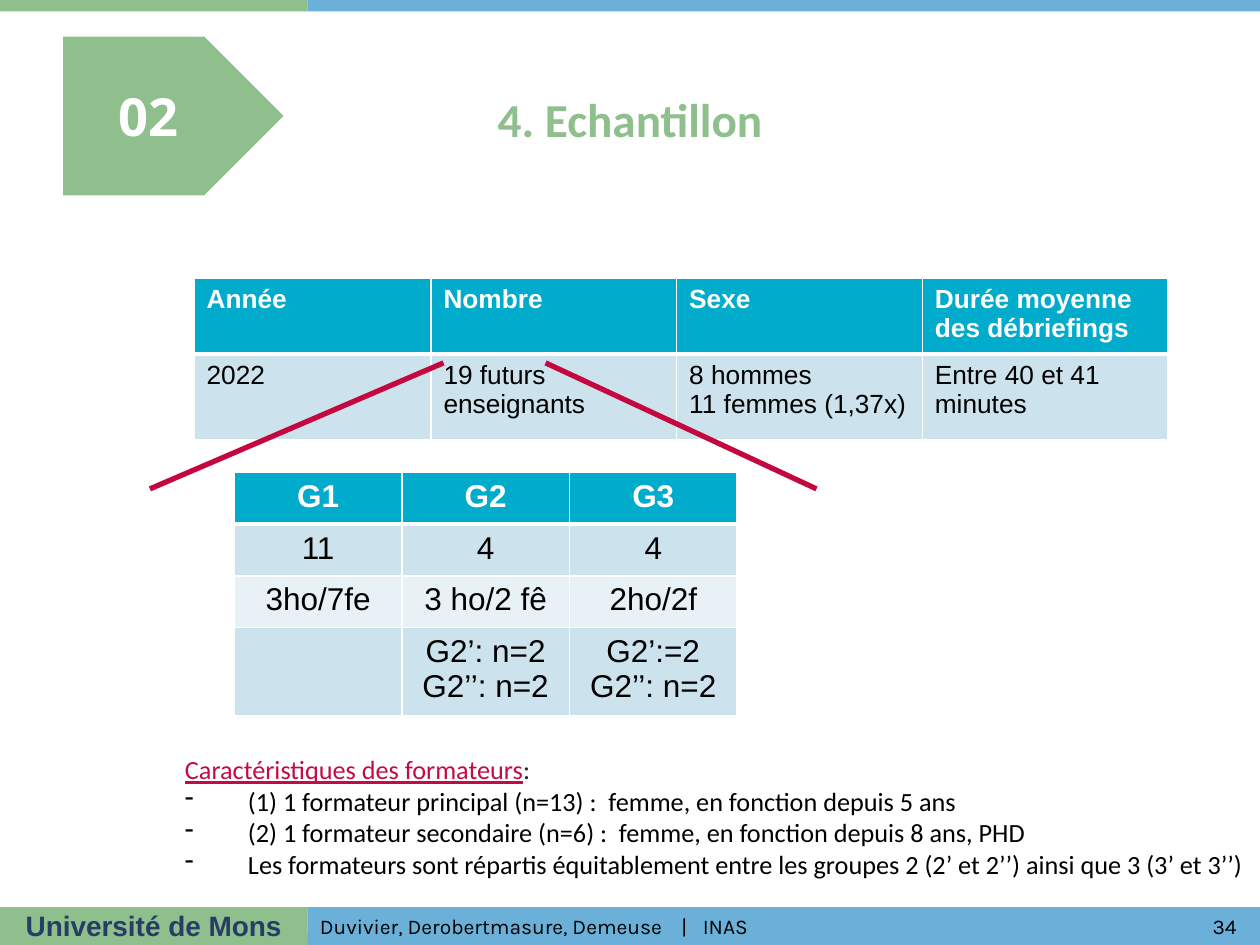
"""Build the slide on the sample of future teachers and their trainers."""
from lxml import etree
from pptx import Presentation
from pptx import util as u
from pptx.dml.color import RGBColor
from pptx.enum import shapes, text
from pptx.oxml.ns import qn

WIDTH, HEIGHT = 10, 7.5
SPLIT = 2.44
FOOTER_TOP, FOOTER_HEIGHT = 7.2, 0.3
GREEN, BLUE, TEAL, RED = "8EBF8C", "6AB0D8", "00ABCC", "C4073F"
BANDS = ["CCE2EC", "E7F1F6"]

STRIPES = [(0, 0.09), (7.41, 0.09), (FOOTER_TOP, FOOTER_HEIGHT)]
SAMPLE = [
    ["Année", "Nombre", "Sexe", "Durée moyenne des débriefings"],
    ["2022", "19 futurs enseignants", "8 hommes\n11 femmes (1,37x)", "Entre 40 et 41 minutes"],
]
GROUPS = [
    ["G1", "G2", "G3"],
    ["11", "4", "4"],
    ["3ho/7fe", "3 ho/2 fê", "2ho/2f"],
    ["", "G2’: n=2\nG2’’: n=2", "G2’:=2\nG2’’: n=2"],
]
TRAINERS = [
    "(1) 1 formateur principal (n=13) :  femme, en fonction depuis 5 ans",
    "(2) 1 formateur secondaire (n=6) :  femme, en fonction depuis 8 ans, PHD",
    "Les formateurs sont répartis équitablement entre les groupes 2 (2’ et 2’’) ainsi que 3 (3’ et 3’’)",
]
BRANCHES = [((3.52, 2.88), (1.19, 3.88)), ((6.48, 3.88), (4.33, 2.88))]


def color(value):
    return RGBColor.from_string(value)


def inches(*values):
    return [u.Inches(value) for value in values]


def add_run(paragraph, words, size=15, font="Calibri", ink="000000", bold=False, underline=False):
    run = paragraph.add_run()
    run.text = words
    run.font.size, run.font.name = u.Pt(size), font
    run.font.bold, run.font.underline = bold, underline
    run.font.color.rgb = color(ink)


def write(frame, words, align="LEFT", anchor="TOP", **style):
    frame.word_wrap = True
    frame.vertical_anchor = getattr(text.MSO_ANCHOR, anchor)
    for index, line in enumerate(words.split("\n")):
        paragraph = frame.add_paragraph() if index else frame.paragraphs[0]
        paragraph.alignment = getattr(text.PP_ALIGN, align)
        if line:
            add_run(paragraph, line, **style)
    return frame


def add_text(slide, box, words, **style):
    return write(slide.shapes.add_textbox(*inches(*box)).text_frame, words, **style)


def add_block(slide, kind, box, fill):
    block = slide.shapes.add_shape(kind, *inches(*box))
    block.shadow.inherit = False
    block.fill.solid()
    block.fill.fore_color.rgb = color(fill)
    block.line.fill.background()


def add_tabs(paragraph, stops):
    tabs = etree.SubElement(paragraph._p.get_or_add_pPr(), qn("a:tabLst"))
    for stop in stops:
        etree.SubElement(tabs, qn("a:tab"), pos=str(u.Inches(stop)), algn="l")


def add_dash(paragraph, indent):
    properties = paragraph._p.get_or_add_pPr()
    properties.set("marL", str(u.Inches(indent)))
    properties.set("indent", str(-u.Inches(indent)))
    etree.SubElement(properties, qn("a:buChar"), char="-")


def add_borders(cell, header):
    properties = cell._tc.get_or_add_tcPr()
    for side in "LRTB":
        points = 3 if header and side == "B" else 1
        border = etree.SubElement(properties, qn(f"a:ln{side}"), w=str(u.Pt(points)))
        fill = etree.SubElement(border, qn("a:solidFill"))
        etree.SubElement(fill, qn("a:srgbClr"), val="FFFFFF")


def add_grid(slide, left, top, columns, heights, rows, **style):
    box = inches(left, top, sum(columns), sum(heights))
    table = slide.shapes.add_table(len(rows), len(columns), *box).table
    for column, width in zip(table.columns, columns):
        column.width = u.Inches(width)
    for r, (row, height) in enumerate(zip(rows, heights)):
        table.rows[r].height = u.Inches(height)
        header = r == 0
        for c, words in enumerate(row):
            cell = table.cell(r, c)
            add_borders(cell, header)
            cell.fill.solid()
            cell.fill.fore_color.rgb = color(TEAL if header else BANDS[(r - 1) % 2])
            write(cell.text_frame, words, font="Arial", bold=header,
                  ink="FFFFFF" if header else "000000", **style)


def add_branch(slide, start, end):
    branch = slide.shapes.add_connector(shapes.MSO_CONNECTOR.STRAIGHT, *inches(*start, *end))
    branch.line.color.rgb = color(RED)
    branch.line.width = u.Pt(3)
    etree.SubElement(branch._element.spPr, qn("a:effectLst"))


def add_footer(slide):
    add_text(slide, (0, 7.16, SPLIT, 0.37), "Université de Mons", align="CENTER",
             size=16, font="Arial", ink="263E65", bold=True)
    small = dict(anchor="MIDDLE", size=12, font="Karla")
    add_text(slide, (9.44, FOOTER_TOP, 0.56, FOOTER_HEIGHT), "34", align="CENTER", **small)
    authors = add_text(slide, (SPLIT, FOOTER_TOP, 7, FOOTER_HEIGHT),
                       "Duvivier, Derobertmasure, Demeuse\t|\tINAS", **small)
    add_tabs(authors.paragraphs[0], [2.87, 3.04])


def add_trainers(slide):
    trainers = add_text(slide, (1.37, 5.93, 8.64, 1.11), "Caractéristiques des formateurs",
                        ink="C40C42", underline=True)
    add_run(trainers.paragraphs[0], ":", ink="231F20")
    for trainer in TRAINERS:
        paragraph = trainers.add_paragraph()
        add_dash(paragraph, 0.5)
        add_run(paragraph, trainer)


def main():
    deck = Presentation()
    deck.slide_width, deck.slide_height = inches(WIDTH, HEIGHT)
    slide = deck.slides.add_slide(deck.slide_layouts[5])
    for top, height in STRIPES:
        for left, width, fill in [(0, SPLIT, GREEN), (SPLIT, WIDTH - SPLIT, BLUE)]:
            add_block(slide, shapes.MSO_SHAPE.RECTANGLE, (left, top, width, height), fill)
    add_footer(slide)
    add_grid(slide, 1.54, 2.21, [1.88] + [1.95] * 3, [0.6, 0.68], SAMPLE, size=15)
    add_grid(slide, 1.86, 3.75, [1.33] * 3, [0.41] * 3 + [0.69], GROUPS, size=18, align="CENTER")
    add_trainers(slide)
    for start, end in BRANCHES:
        add_branch(slide, start, end)
    title = slide.shapes.title
    title.left, title.top, title.width, title.height = inches(0.5, 0.32, 9, 1.25)
    write(title.text_frame, "4. Echantillon", align="CENTER", anchor="MIDDLE",
          size=27, ink=GREEN, bold=True)
    add_block(slide, shapes.MSO_SHAPE.PENTAGON, (0.5, 0.29, 1.75, 1.26), GREEN)
    add_text(slide, (0.58, 0.62, 1.19, 0.61), "02", align="CENTER",
             size=30, font="Open Sans", ink="FFFFFF", bold=True)
    deck.save("out.pptx")


if __name__ == "__main__":
    main()
